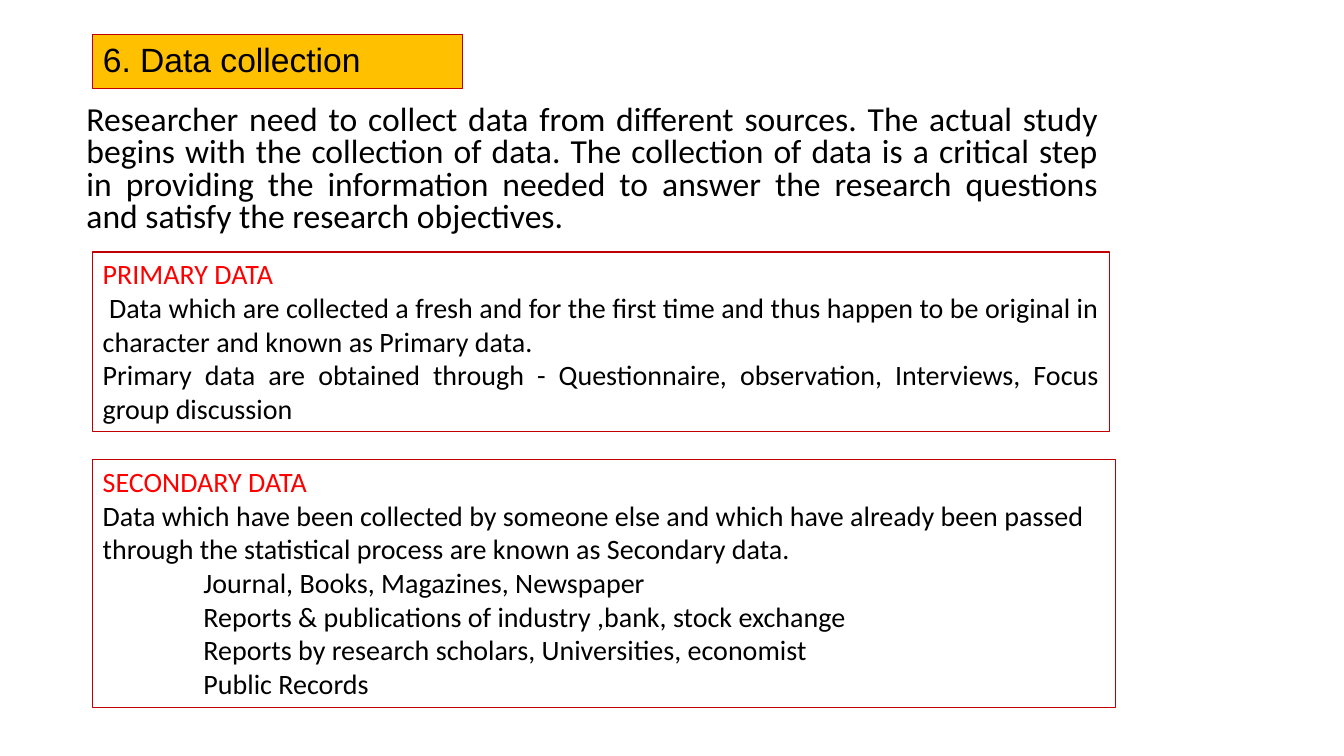
from pptx import Presentation
from pptx import util as u
from pptx.dml.color import RGBColor
from pptx.enum import text

PX = 9144  # 100 px to the inch
BLACK, RED, EDGE, GOLD = "000000", "FF0000", "C00000", "FFC000"
LEFT, JUST = text.PP_ALIGN.LEFT, text.PP_ALIGN.JUSTIFY

INTRO = (
    "Researcher need to collect data from different sources. The actual study "
    "begins with the collection of data. The collection of data is a critical "
    "step in providing the information needed to answer the research questions "
    "and satisfy the research objectives."
)
# Each line: words, colour, alignment, indent in px
PRIMARY = [
    ("PRIMARY DATA", RED, JUST, 0),
    (" Data which are collected a fresh and for the first time and thus happen "
     "to be original in character and known as Primary data. ", BLACK, JUST, 0),
    ("Primary data are obtained through - Questionnaire, observation, "
     "Interviews, Focus group discussion", BLACK, JUST, 0),
]
SOURCES = [
    "Journal, Books, Magazines, Newspaper",
    "Reports & publications of industry ,bank, stock exchange",
    "Reports by research scholars, Universities, economist",
    "Public Records",
]
SECOND = [
    ("SECONDARY DATA", RED, JUST, 0),
    ("Data which have been collected by someone else and which have already "
     "been passed through the statistical process are known as Secondary data.",
     BLACK, LEFT, 0),
] + [(name, BLACK, LEFT, 100) for name in SOURCES]


def color(code):
    return RGBColor.from_string(code)


def place(shape, x, y, w, h):
    shape.left, shape.top = x * PX, y * PX
    shape.width, shape.height = w * PX, h * PX


def border(shape):
    shape.line.color.rgb = color(EDGE)
    shape.line.width = u.Pt(0.75)


def add_run(para, words, size, font="Calibri", code=BLACK):
    run = para.add_run()
    run.text = words
    run.font.size = u.Pt(size)
    run.font.name = font
    run.font.color.rgb = color(code)


def add_box(slide, x, y, w, h):
    box = slide.shapes.add_textbox(x * PX, y * PX, w * PX, h * PX)
    box.text_frame.word_wrap = True
    return box


def add_title(slide, words):
    title = slide.shapes.title
    place(title, 92, 34, 367, 54)
    title.fill.solid()
    title.fill.fore_color.rgb = color(GOLD)
    border(title)
    frame = title.text_frame
    frame.auto_size = text.MSO_AUTO_SIZE.NONE
    frame.vertical_anchor = text.MSO_ANCHOR.MIDDLE
    para = frame.paragraphs[0]
    para.alignment = LEFT
    para.line_spacing = 0.9
    add_run(para, words, 24, "Arial")


def add_intro(slide, words):
    para = add_box(slide, 76, 100, 1023, 151).text_frame.paragraphs[0]
    para.alignment = JUST
    para.line_spacing = 0.8
    para.space_before = u.Pt(10)
    add_run(para, words, 24)


def add_panel(slide, y, w, h, lines):
    box = add_box(slide, 92, y, w, h)
    border(box)
    frame = box.text_frame
    for i, (words, code, align, indent) in enumerate(lines):
        para = frame.add_paragraph() if i else frame.paragraphs[0]
        para.alignment = align
        if indent:
            para._p.get_or_add_pPr().set("marL", str(indent * PX))
        add_run(para, words, 20, code=code)


def main():
    deck = Presentation()
    deck.slide_width, deck.slide_height = 1333 * PX, 750 * PX
    slide = deck.slides.add_slide(deck.slide_layouts[5])

    # Heading and opening text
    add_title(slide, "6. Data collection")
    add_intro(slide, INTRO)

    # Framed panels for the two kinds of data
    add_panel(slide, 250, 1008, 178, PRIMARY)
    add_panel(slide, 456, 1014, 246, SECOND)

    deck.save("out.pptx")


if __name__ == "__main__":
    main()
